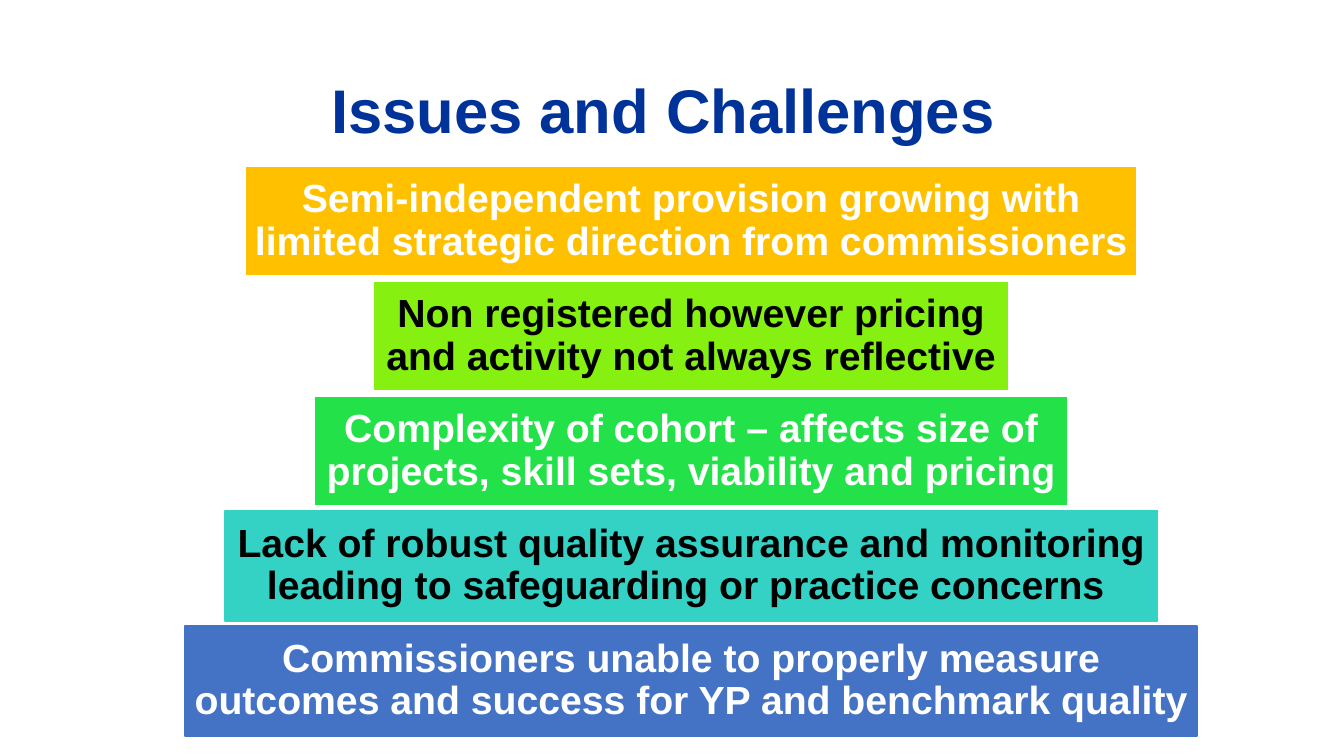
from dataclasses import dataclass

from pptx import Presentation
from pptx.dml.color import RGBColor
from pptx.enum.shapes import MSO_SHAPE as Preset
from pptx.enum.text import MSO_ANCHOR as Anchor, PP_ALIGN as Align
from pptx.util import Pt


@dataclass(frozen=True)
class Theme:
    font: str = "Arial"
    title_size: int = 44
    issue_size: int = 28
    title: str = "003399"
    light: str = "FFFFFF"
    dark: str = "000000"
    amber: str = "FFC000"
    lime: str = "86F011"
    green: str = "23E148"
    teal: str = "33D2C5"
    blue: str = "4472C4"


THEME = Theme()
TITLE = "Issues and Challenges "

# wording, bar width, fill, outline, text colour
ISSUES = [
    ("Semi-independent provision growing with limited strategic direction from commissioners",
     637.2, THEME.amber, THEME.light, THEME.light),
    ("Non registered however pricing and activity not always reflective ",
     453.6, THEME.lime, THEME.light, THEME.dark),
    ("Complexity of cohort – affects size of projects, skill sets, viability and pricing ",
     537.8, THEME.green, THEME.light, THEME.light),
    ("Lack of robust quality assurance and monitoring leading to safeguarding or practice concerns ",
     666, THEME.teal, THEME.teal, THEME.dark),
    ("Commissioners unable to properly measure outcomes and success for YP and benchmark quality",
     722.9, THEME.blue, THEME.blue, THEME.light),
]

STACK_CENTRE = 493.6
STACK_TOP = 118.8
BAR_HEIGHT = 78.5
BAR_PITCH = 82.1
BAR_INSET = 5.7


def write(frame, wording, size, colour):
    frame.word_wrap = True
    frame.vertical_anchor = Anchor.MIDDLE
    paragraph = frame.paragraphs[0]
    paragraph.text = wording
    paragraph.alignment = Align.CENTER
    paragraph.line_spacing = 0.9
    font = paragraph.font
    font.name, font.size, font.bold = THEME.font, Pt(size), True
    font.color.rgb = RGBColor.from_string(colour)


def add_title(slide):
    heading = slide.shapes.add_textbox(Pt(66), Pt(28.8), Pt(828), Pt(104.4))
    write(heading.text_frame, TITLE, THEME.title_size, THEME.title)


def add_issue(slide, row, wording, width, fill, outline, text_colour):
    bar = slide.shapes.add_shape(
        Preset.RECTANGLE, Pt(STACK_CENTRE - width / 2), Pt(STACK_TOP + row * BAR_PITCH),
        Pt(width), Pt(BAR_HEIGHT))
    bar.shadow.inherit = False
    bar.fill.solid()
    bar.fill.fore_color.rgb = RGBColor.from_string(fill)
    bar.line.color.rgb = RGBColor.from_string(outline)
    bar.line.width = Pt(1)
    frame = bar.text_frame
    frame.margin_left = frame.margin_right = Pt(BAR_INSET)
    frame.margin_top = frame.margin_bottom = Pt(BAR_INSET)
    write(frame, wording, THEME.issue_size, text_colour)


def main():
    deck = Presentation()
    deck.slide_width, deck.slide_height = Pt(960), Pt(540)
    slide = deck.slides.add_slide(deck.slide_layouts[6])
    add_title(slide)
    for row, issue in enumerate(ISSUES):
        add_issue(slide, row, *issue)
    deck.save("out.pptx")


if __name__ == "__main__":
    main()
